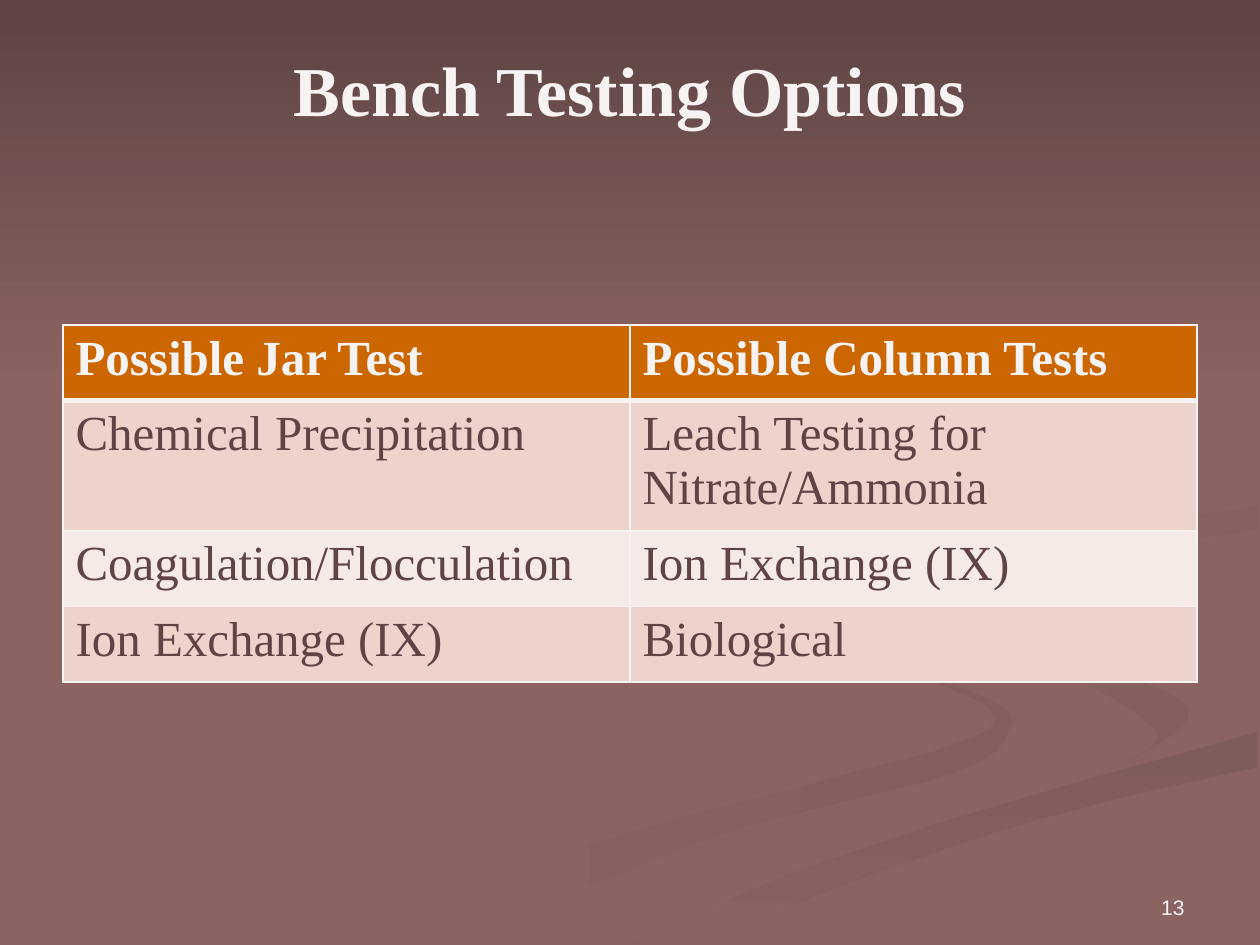
import pptx
import pptx.util
import pptx.oxml
import pptx.oxml.ns
import pptx.dml.color
import pptx.enum.text
import pptx.enum.shapes

WIDE, HIGH = pptx.util.Inches(10), pptx.util.Inches(7.5)
UNIT = WIDE // 1000  # ribbon points are thousandths of the slide's width
STEPS = 6  # straight pieces between two points of a curve
SERIF, SANS = "Times New Roman", "Arial"
HEX = {
    "base": "8A6362", "dark": "5E4444", "pale": "F7F3F3", "head": "CC6600",
    "odd": "ECD3CC", "even": "F6EAE7", "mist": "845F5E", "deep": "7F5B5A",
    "haze": "825E5D",
}
ROWS = [
    ("Possible Jar Test", "Possible Column Tests"),
    ("Chemical Precipitation", "Leach Testing for Nitrate/Ammonia"),
    ("Coagulation/Flocculation", "Ion Exchange (IX)"),
    ("Ion Exchange (IX)", "Biological"),
]

# Each ribbon: first colour, last colour, clockwise angle, two curved edges
RIBBONS = [
    ("base", "mist", 0,
     [(575, 459), (642, 507), (781, 553), (800, 581), (756, 614),
      (564, 665), (361, 749)],
     [(300, 749), (458, 674), (652, 620), (767, 587), (785, 562),
      (697, 525), (581, 484)]),
    ("base", "mist", 45,
     [(724, 464), (758, 498), (905, 540), (943, 570), (894, 605)],
     [(894, 605), (918, 581), (854, 539), (755, 505)]),
    ("deep", "base", 90,
     [(503, 749), (630, 693), (797, 638), (998, 581)],
     [(998, 609), (821, 651), (649, 710), (571, 749)]),
    ("haze", "base", 45,
     [(998, 402), (850, 427), (781, 460), (826, 496)],
     [(826, 496), (805, 472), (843, 448), (998, 420)]),
]


def tint(name):
    return pptx.dml.color.RGBColor.from_string(HEX[name])


def write(frame, text, size=28, font=SERIF, color="dark", bold=False,
          align="LEFT", anchor="TOP"):
    frame.word_wrap = True
    frame.vertical_anchor = getattr(pptx.enum.text.MSO_ANCHOR, anchor)
    para = frame.paragraphs[0]
    para.alignment = getattr(pptx.enum.text.PP_ALIGN, align)
    run = para.add_run()
    run.text = text
    run.font.size = pptx.util.Pt(size)
    run.font.name = font
    run.font.bold = bold
    run.font.color.rgb = tint(color)


def label(slide, box, text, **style):
    """Add a text box; box holds left, top, width, height as slide shares."""
    x, y, w, h = box
    area = slide.shapes.add_textbox(
        int(x * WIDE), int(y * HIGH), int(w * WIDE), int(h * HIGH))
    write(area.text_frame, text, **style)


def blend(shape, first, last, angle):
    """Fill a shape with a two-colour gradient and no outline."""
    shape.shadow.inherit = False
    shape.line.fill.background()
    shape.fill.gradient()
    shape.fill.gradient_angle = (360 - angle) % 360
    for stop, name in zip(shape.fill.gradient_stops, (first, last)):
        stop.color.rgb = tint(name)


def curve(points):
    """Return a Catmull-Rom curve through the points."""
    ends = [points[0], *points, points[-1]]
    path = []
    for a, b, c, d in zip(ends, ends[1:], ends[2:], ends[3:]):
        for step in range(STEPS):
            t = step / STEPS
            path.append(tuple(
                q + t * (r - p + t * (2 * p - 5 * q + 4 * r - s
                                      + t * (3 * (q - r) + s - p))) / 2
                for p, q, r, s in zip(a, b, c, d)))
    return path + [points[-1]]


def ribbon(slide, first, last, angle, out, back):
    points = curve(out) + curve(back)
    pen = slide.shapes.build_freeform(*points[0], scale=UNIT)
    pen.add_line_segments(points[1:], close=True)
    blend(pen.convert_to_shape(), first, last, angle)


def border(cell, low):
    """Rule all four sides of a cell; low is the bottom width in points."""
    props = cell._tc.get_or_add_tcPr()
    space = pptx.oxml.ns.nsdecls("a")
    sides = {"L": 1, "R": 1, "T": 1, "B": low}
    for spot, (side, width) in enumerate(sides.items()):
        props.insert(spot, pptx.oxml.parse_xml(
            f'<a:ln{side} {space} w="{int(pptx.util.Pt(width))}"><a:solidFill>'
            f'<a:srgbClr val="{HEX["pale"]}"/></a:solidFill></a:ln{side}>'))


def grid(slide, rows):
    tall = int(0.08 * HIGH)
    table = slide.shapes.add_table(
        len(rows), len(rows[0]), int(0.05 * WIDE), int(0.344 * HIGH),
        int(0.9 * WIDE), tall * len(rows)).table
    for r, row in enumerate(rows):
        top = r == 0
        for c, text in enumerate(row):
            cell = table.cell(r, c)
            cell.fill.solid()
            cell.fill.fore_color.rgb = tint(
                "head" if top else "odd" if r % 2 else "even")
            write(cell.text_frame, text, bold=top,
                  color="pale" if top else "dark")
            border(cell, 3 if top else 1)


def main():
    deck = pptx.Presentation()
    deck.slide_width, deck.slide_height = WIDE, HIGH
    slide = deck.slides.add_slide(deck.slide_layouts[6])
    slide.background.fill.solid()
    slide.background.fill.fore_color.rgb = tint("base")
    for item in RIBBONS:
        ribbon(slide, *item)
    panel = slide.shapes.add_shape(
        pptx.enum.shapes.MSO_SHAPE.RECTANGLE, 0, 0, WIDE, int(0.41 * HIGH))
    blend(panel, "dark", "base", 90)
    label(slide, (0.717, 0.91, 0.233, 0.07), "13", size=12, font=SANS,
          color="pale", align="RIGHT", anchor="BOTTOM")
    label(slide, (0.05, 0.01, 0.9, 0.167), "Bench Testing Options", size=40,
          color="pale", bold=True, align="CENTER", anchor="MIDDLE")
    grid(slide, ROWS)
    deck.save("out.pptx")


if __name__ == "__main__":
    main()
